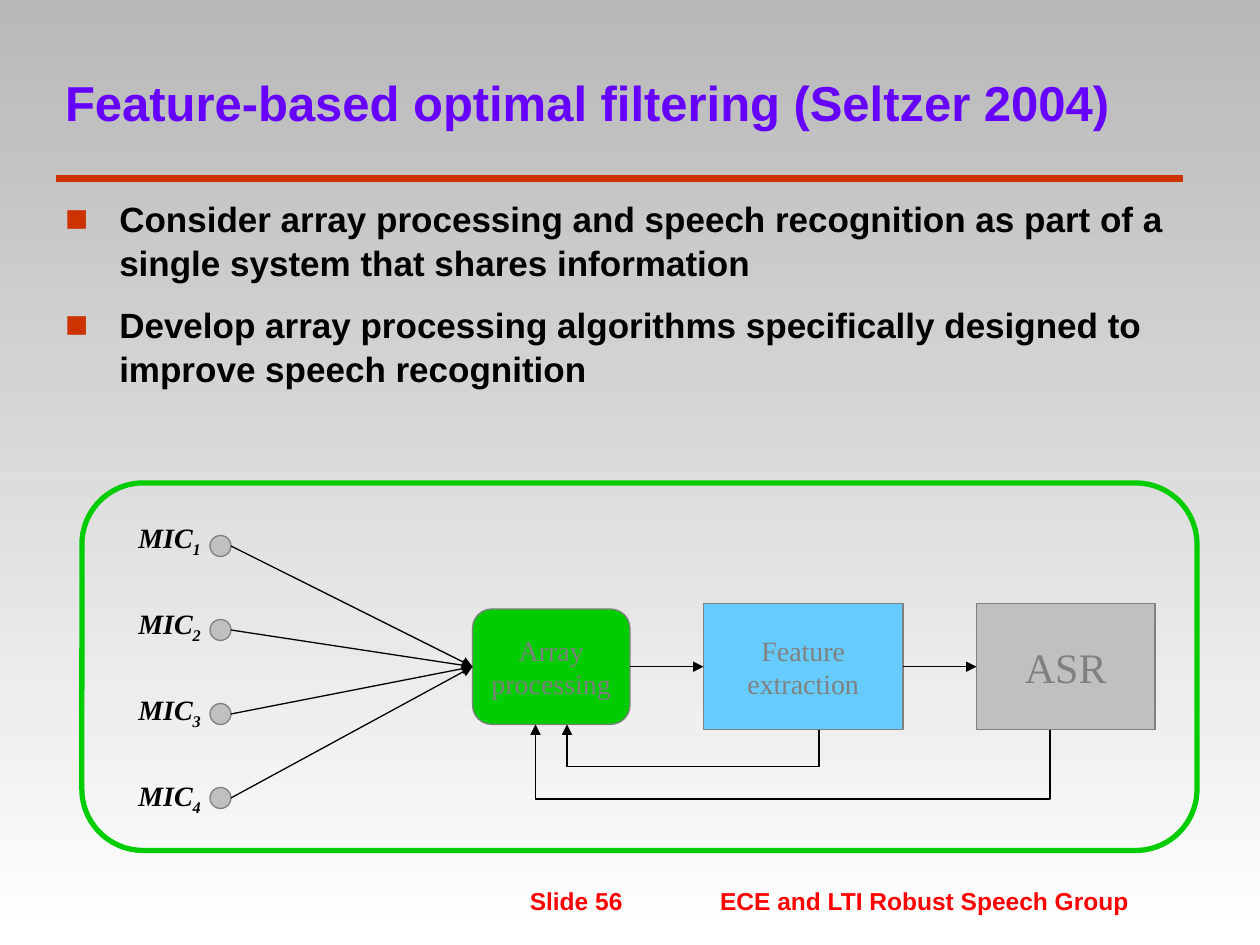
from pptx import Presentation, util as u
from pptx.dml.color import RGBColor
from pptx.enum import shapes, text
from pptx.oxml.ns import qn
from lxml import etree

TITLE = "Feature-based optimal filtering (Seltzer 2004)"
POINTS = [
    "Consider array processing and speech recognition as part of a single system that shares information",
    "Develop array processing algorithms specifically designed to improve speech recognition",
]
FOOTER = "Slide 56\tECE and LTI Robust Speech Group"
MICS = ["1", "2", "3", "4"]
RECT, ROUND, OVAL = (shapes.MSO_SHAPE.RECTANGLE, shapes.MSO_SHAPE.ROUNDED_RECTANGLE,
                     shapes.MSO_SHAPE.OVAL)
STAGES = [
    (["Array", "processing"], ROUND, "green", "label", (45, 58, 15, 11)),
    (["Feature", "extraction"], RECT, "blue", "label", (67, 57.5, 19, 12)),
    (["ASR"], RECT, "silver", "large", (93, 57.5, 17, 12)),
]
FEEDBACK = [(100, 51, 76.1), (78, 54, 73)]
THEME = {
    "sans": "Arial", "serif": "Times New Roman",
    "top": "B8B8B8", "bottom": "FFFFFF", "title": "6600FF", "accent": "CC3300",
    "footer": "FF0000", "ink": "000000", "grey": "808080", "silver": "C0C0C0",
    "green": "00CC00", "blue": "66CCFF",
    "size": {"title": 28, "body": 20, "footer": 14, "label": 16, "large": 24},
}
AXIS = 63.5
STAGE_BOTTOM, ARRAY_BOTTOM = 69.5, 69


def grid(*cells):
    return [u.Inches(cell / 12) for cell in cells]


def rgb(name):
    return RGBColor.from_string(THEME[name])


def add_run(paragraph, words, size, color, face="sans", bold=False, italic=False):
    run = paragraph.add_run()
    run.text = words
    run.font.name = THEME[face]
    run.font.size = u.Pt(THEME["size"][size])
    run.font.color.rgb = rgb(color)
    run.font.bold, run.font.italic = bold, italic
    return run


def place(shape, *cells):
    shape.left, shape.top, shape.width, shape.height = grid(*cells)


def add_box(slide, kind, cells, fill, line, weight):
    box = slide.shapes.add_shape(kind, *grid(*cells))
    box.shadow.inherit = False
    if fill:
        box.fill.solid()
        box.fill.fore_color.rgb = rgb(fill)
    else:
        box.fill.background()
    box.line.color.rgb = rgb(line)
    box.line.width = u.Pt(weight)
    return box


def add_line(slide, ends, color="ink", weight=0.75, arrow=True,
             kind=shapes.MSO_CONNECTOR.STRAIGHT):
    line = slide.shapes.add_connector(kind, *grid(*ends))
    line.line.color.rgb = rgb(color)
    line.line.width = u.Pt(weight)
    properties = line._element.spPr
    if arrow:
        etree.SubElement(properties.find(qn("a:ln")), qn("a:tailEnd"), type="triangle")
    etree.SubElement(properties, qn("a:effectLst"))
    return line


def add_feedback(slide, start, end, low):
    depth, span = STAGE_BOTTOM - ARRAY_BOTTOM, start - end
    x, y = (start + end) / 2, (STAGE_BOTTOM + ARRAY_BOTTOM) / 2
    loop = add_line(slide, (x - depth / 2, y - span / 2, x + depth / 2, y + span / 2),
                    kind=shapes.MSO_CONNECTOR.ELBOW)
    properties = loop._element.spPr
    frame = properties.find(qn("a:xfrm"))
    frame.set("rot", str(270 * 60000))
    frame.set("flipV", "1")
    guides = properties.find(qn("a:prstGeom")).get_or_add_avLst()
    bend = round((STAGE_BOTTOM - low) / depth * 100000)
    etree.SubElement(guides, qn("a:gd"), name="adj1", fmla=f"val {bend}")


def add_bullet(paragraph):
    settings = paragraph._p.get_or_add_pPr()
    hang = u.Inches(0.43)
    settings.set("marL", str(hang))
    settings.set("indent", str(-hang))
    color = etree.SubElement(settings, qn("a:buClr"))
    etree.SubElement(color, qn("a:srgbClr"), val=THEME["accent"])
    etree.SubElement(settings, qn("a:buSzPct"), val="110000")
    etree.SubElement(settings, qn("a:buFont"), typeface=THEME["sans"])
    etree.SubElement(settings, qn("a:buChar"), char="■")


def add_background(slide):
    fill = slide.background.fill
    fill.gradient()
    fill.gradient_angle = 270
    for stop, name in zip(fill.gradient_stops, ("top", "bottom")):
        stop.color.rgb = rgb(name)


def add_heading_and_points(slide):
    title, body = slide.placeholders
    place(title, 5, 4.5, 108, 8)
    frame = title.text_frame
    frame.auto_size = text.MSO_AUTO_SIZE.NONE
    frame.vertical_anchor = text.MSO_ANCHOR.BOTTOM
    frame.margin_top = frame.margin_bottom = 0
    heading = frame.paragraphs[0]
    heading.alignment = text.PP_ALIGN.LEFT
    add_run(heading, TITLE, "title", "title", bold=True)

    place(body, 5, 18, 108, 60)
    frame = body.text_frame
    frame.auto_size = text.MSO_AUTO_SIZE.NONE
    for i, words in enumerate(POINTS):
        point = frame.add_paragraph() if i else frame.paragraphs[0]
        point.space_before = u.Pt(10 if i else 0)
        point.line_spacing = 1.05
        add_bullet(point)
        add_run(point, words, "body", "ink", bold=True)


def add_footer(slide):
    frame = slide.shapes.add_textbox(*grid(17, 82.1, 97, 6)).text_frame
    frame.word_wrap = True
    line = frame.paragraphs[0]
    tabs = etree.SubElement(line._p.get_or_add_pPr(), qn("a:tabLst"))
    for inches in (2.69, 4.2):
        etree.SubElement(tabs, qn("a:tab"), pos=str(u.Inches(inches)), algn="l")
    add_run(line, "\t", "large", "ink", "serif")
    add_run(line, FOOTER, "footer", "footer", bold=True)


def add_stages(slide):
    for lines, kind, fill, size, cells in STAGES:
        stage = add_box(slide, kind, cells, fill, "grey", 0.75)
        frame = stage.text_frame
        frame.word_wrap = False
        frame.vertical_anchor = text.MSO_ANCHOR.MIDDLE
        for i, words in enumerate(lines):
            line = frame.add_paragraph() if i else frame.paragraphs[0]
            line.alignment = text.PP_ALIGN.CENTER
            add_run(line, words, size, "grey", "serif")
    places = [stage[-1] for stage in STAGES]
    for (left, _, width, _), following in zip(places, places[1:]):
        add_line(slide, (left + width, AXIS, following[0], AXIS))


def add_mics(slide):
    for i, number in enumerate(MICS):
        top = 51 + 8 * i
        add_box(slide, OVAL, (20, top, 2, 2), "silver", "grey", 0.75)
        add_line(slide, (22, top + 1, 45, AXIS))
        frame = slide.shapes.add_textbox(*grid(12, 49 + 8.2 * i, 10, 4.4)).text_frame
        frame.word_wrap = True
        label = frame.paragraphs[0]
        add_run(label, "MIC", "label", "ink", "serif", True, True)
        index = add_run(label, number, "label", "ink", "serif", True, True)
        index.font._element.set("baseline", "-25000")


def main():
    deck = Presentation()
    deck.slide_width, deck.slide_height = grid(120, 90)
    slide = deck.slides.add_slide(deck.slide_layouts[1])
    add_background(slide)
    add_line(slide, (5.3, 17, 112.7, 17), "accent", 4, arrow=False)
    add_footer(slide)
    add_box(slide, ROUND, (7.8, 46, 106.2, 35), None, "green", 3)
    add_stages(slide)
    add_mics(slide)
    for loop in FEEDBACK:
        add_feedback(slide, *loop)
    add_heading_and_points(slide)
    deck.save("out.pptx")


if __name__ == "__main__":
    main()
